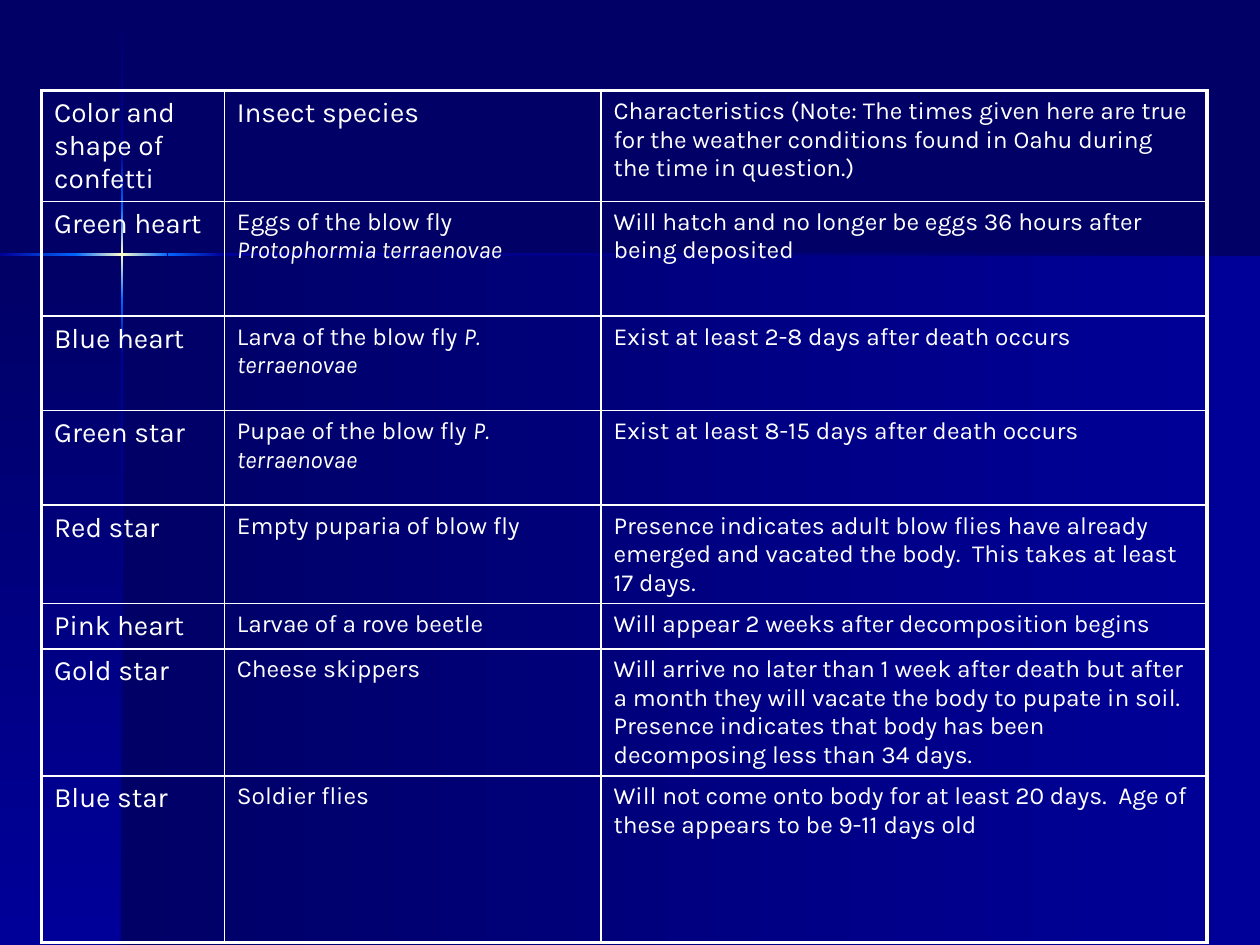
from copy import deepcopy
from lxml import etree
from pptx import Presentation
from pptx.dml.color import RGBColor
from pptx.enum.shapes import MSO_SHAPE
from pptx.oxml.ns import qn
from pptx.util import Inches, Pt

RECT = MSO_SHAPE.RECTANGLE
NAVY, BLUE, GLOW, CREAM, WHITE = "000066", "000099", "0066FF", "FFFFCC", "FFFFFF"
DOWN, ACROSS = 270, 0

BARS = [
    (0.97, 2.02, 9.03, 5.48, ACROSS, [NAVY, BLUE]),
    (0, 2.02, 0.97, 5.48, DOWN, [NAVY, BLUE]),
    (0.96, 0.01, 0.02, 1.2, DOWN, [NAVY, BLUE]),
    (0.96, 2.82, 0.02, 4.68, DOWN, [BLUE, NAVY]),
    (1.77, 2.01, 8.23, 0.02, ACROSS, [BLUE, NAVY]),
    (0.96, 2.38, 0.02, 0.44, DOWN, [GLOW, BLUE]),
    (0.96, 1.21, 0.02, 0.44, DOWN, [BLUE, GLOW]),
    (0.96, 1.65, 0.02, 0.73, DOWN, [GLOW, CREAM, GLOW]),
    (0, 2.01, 0.61, 0.02, ACROSS, [BLUE, GLOW]),
    (1.33, 2.01, 0.44, 0.02, ACROSS, [GLOW, BLUE]),
    (0.6, 2.01, 0.73, 0.02, ACROSS, [GLOW, CREAM, GLOW]),
]

COLS = [1.45, 2.99, 4.81]
ROWS = [
    (0.58, "Color and shape of confetti", "Insect species", "",
     "Characteristics (Note: The times given here are true for the weather "
     "conditions found in Oahu during the time in question.)"),
    (0.91, "Green heart", "Eggs of the blow fly ", "Protophormia terraenovae",
     "Will hatch and no longer be eggs 36 hours after being deposited"),
    (0.75, "Blue heart", "Larva of the blow fly ", "P. terraenovae",
     "Exist at least 2-8 days after death occurs"),
    (0.75, "Green star", "Pupae of the blow fly ", "P. terraenovae",
     "Exist at least 8-15 days after death occurs"),
    (0.5, "Red star", "Empty puparia of blow fly", "",
     "Presence indicates adult blow flies have already emerged and vacated "
     "the body.  This takes at least 17 days."),
    (0.35, "Pink heart", "Larvae of a rove beetle", "",
     "Will appear 2 weeks after decomposition begins"),
    (0.45, "Gold star", "Cheese skippers", "",
     "Will arrive no later than 1 week after death but after a month they will "
     "vacate the body to pupate in soil.  Presence indicates that body has been "
     "decomposing less than 34 days."),
    (1.32, "Blue star", "Soldier flies", "",
     "Will not come onto body for at least 20 days.  Age of these appears to be "
     "9-11 days old"),
]


def paint(color, tone):
    color.rgb = RGBColor.from_string(tone)


def add_bar(slide, left, top, width, height, angle, tones):
    bar = slide.shapes.add_shape(RECT, *map(Inches, (left, top, width, height)))
    bar.shadow.inherit = False
    bar.line.fill.background()
    bar.fill.gradient()
    bar.fill.gradient_angle = angle
    if len(tones) == 3:
        first = next(bar._element.iter(qn("a:gs")))
        mid = deepcopy(first)
        mid.set("pos", "50000")
        first.addnext(mid)
    for stop, tone in zip(bar.fill.gradient_stops, tones):
        paint(stop.color, tone)


def add_edges(cell, sides):
    props = cell._tc.get_or_add_tcPr()
    for spot, (side, outer) in enumerate(sides):
        line = etree.Element(qn("a:ln" + side), w=str(Pt(2.25 if outer else 1)))
        fill = etree.SubElement(line, qn("a:solidFill"))
        etree.SubElement(fill, qn("a:srgbClr"), val=WHITE)
        props.insert(spot, line)


def fill_cell(cell, parts, size):
    cell.fill.background()
    para = cell.text_frame.paragraphs[0]
    for text, slant in parts:
        run = para.add_run()
        run.text = text
        if slant:
            run.font.italic = True
    para.font.name = "Karla"
    para.font.size = Pt(size)
    paint(para.font.color, WHITE)


def add_grid(slide):
    frame = slide.shapes.add_table(
        len(ROWS), len(COLS), Inches(0.33), Inches(0.72), Inches(9.25), Inches(6.83))
    table = frame.table
    table.first_row = table.horz_banding = False
    for col, width in zip(table.columns, COLS):
        col.width = Inches(width)
    last = len(ROWS) - 1
    for r, (height, label, insect, latin, note) in enumerate(ROWS):
        table.rows[r].height = Inches(height)
        species = [(insect, False)] + ([(latin, True)] if latin else [])
        for c, parts in enumerate([[(label, False)], species, [(note, False)]]):
            cell = table.cell(r, c)
            big = c == 0 or (r == 0 and c == 1)
            fill_cell(cell, parts, 16 if big else 14)
            add_edges(cell, [("L", c == 0), ("R", c == len(COLS) - 1),
                             ("T", r == 0), ("B", r == last)])
    frame.height = Inches(6.83)


def main():
    deck = Presentation()
    deck.slide_width, deck.slide_height = Inches(10), Inches(7.5)
    slide = deck.slides.add_slide(deck.slide_layouts[6])
    slide.background.fill.solid()
    paint(slide.background.fill.fore_color, NAVY)
    for bar in BARS:
        add_bar(slide, *bar)
    add_grid(slide)
    deck.save("out.pptx")


if __name__ == "__main__":
    main()
